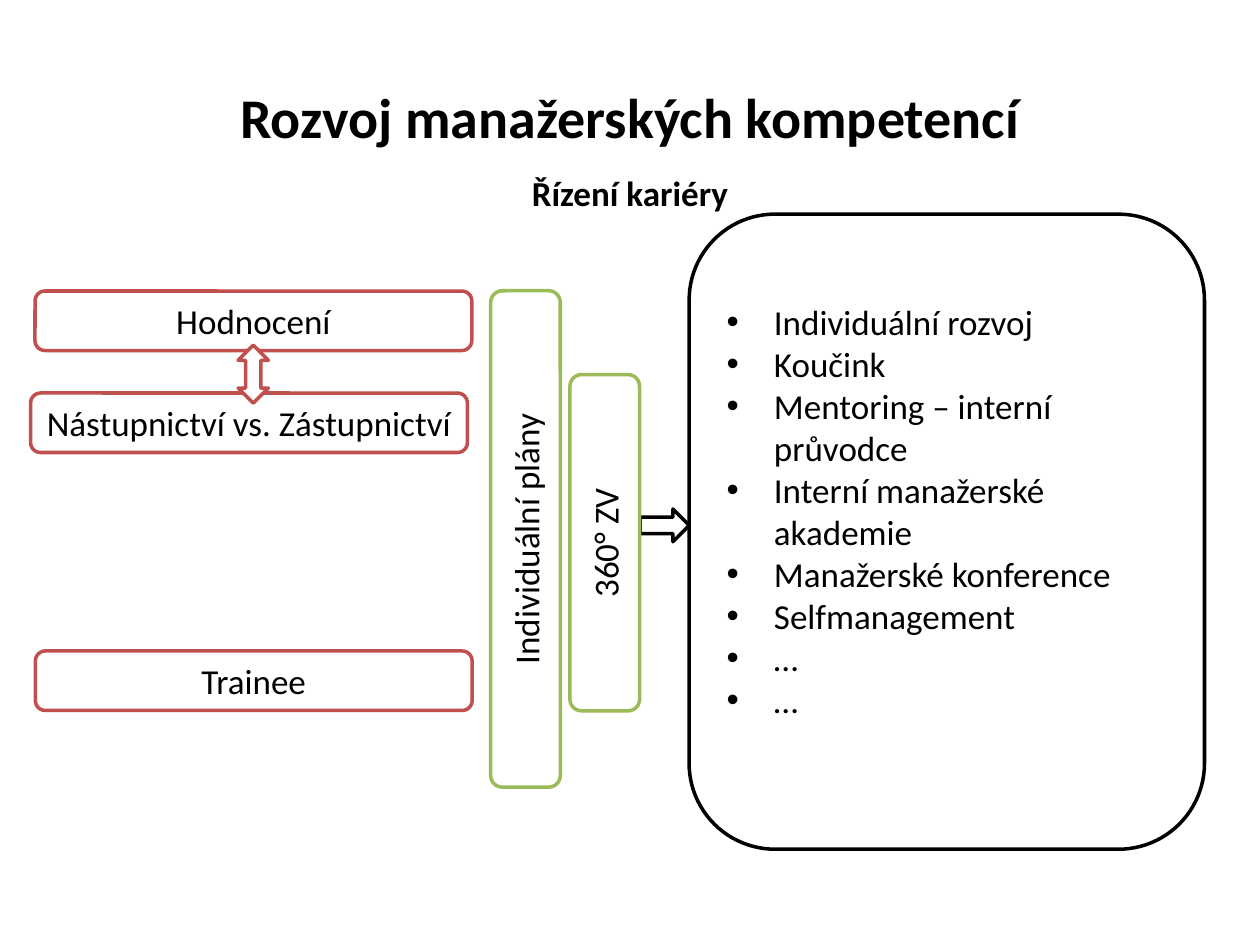
"""Build the slide on developing managerial competencies through career management."""
import pptx
import pptx.dml.color
import pptx.enum.shapes
import pptx.enum.text
import pptx.oxml
import pptx.oxml.ns
import pptx.util

Pt = pptx.util.Pt
RGBColor = pptx.dml.color.RGBColor
PRESET = pptx.enum.shapes.MSO_SHAPE
ANCHOR = pptx.enum.text.MSO_ANCHOR
ALIGN = pptx.enum.text.PP_ALIGN

BLACK = RGBColor(0x00, 0x00, 0x00)
WHITE = RGBColor(0xFF, 0xFF, 0xFF)
RED = RGBColor(0xC0, 0x50, 0x4D)
GREEN = RGBColor(0x9B, 0xBB, 0x59)
FONT = "Calibri"
BULLET_INDENT = 27

TITLE = ("Rozvoj manažerských kompetencí", 32, (36, 21.6, 648, 90))
SUBTITLE = ("Řízení kariéry", 20, (36, 94.3, 648, 33.8))
INPUTS = [
    ("Hodnocení", (20, 166.3, 249.6, 34)),
    ("Nástupnictví vs. Zástupnictví", (17.5, 224.6, 249.6, 34)),
    ("Trainee", (20.2, 372, 249.6, 34)),
]
PLANS = [
    ("Individuální plány", (280.4, 166.1, 39.8, 283.7)),
    ("360° ZV", (325.7, 214, 39.8, 192.2)),
]
INPUT_LINK = (136.1, 197.3, 17.3, 33.1)
PLAN_LINK = (365.8, 290.9, 28.1, 18.7)
PANEL = (393.8, 122.4, 294.5, 362.9)
METHODS = [
    "Individuální rozvoj",
    "Koučink",
    "Mentoring – interní průvodce",
    "Interní manažerské akademie",
    "Manažerské konference",
    "Selfmanagement",
    "…",
    "…",
]


def style(paragraph, size=20, bold=False, align=ALIGN.CENTER):
    paragraph.alignment = align
    paragraph.space_before = Pt(0)
    font = paragraph.font
    font.name, font.size, font.bold = FONT, Pt(size), bold
    font.color.rgb = BLACK


def set_bullet(paragraph, char=None, indent=0):
    properties = paragraph._p.get_or_add_pPr()
    properties.set("marL", str(Pt(indent)))
    properties.set("indent", str(-Pt(indent)))
    if char:
        font = pptx.oxml.ns.qn("a:buFont")
        properties.append(properties.makeelement(font, {"typeface": "Arial"}))
        mark = properties.makeelement(pptx.oxml.ns.qn("a:buChar"), {"char": char})
    else:
        mark = properties.makeelement(pptx.oxml.ns.qn("a:buNone"), {})
    properties.append(mark)


def fill_heading(placeholder, heading):
    text, size, area = heading
    placeholder.left, placeholder.top, placeholder.width, placeholder.height = map(Pt, area)
    placeholder.text_frame.text = text
    paragraph = placeholder.text_frame.paragraphs[0]
    set_bullet(paragraph)
    style(paragraph, size, bold=True)


def add_outlined(slide, preset, area, color, text="", rotation=0):
    left, top, width, height = area
    if rotation:
        left, top = left + (width - height) / 2, top + (height - width) / 2
        width, height = height, width
    shape = slide.shapes.add_shape(preset, Pt(left), Pt(top), Pt(width), Pt(height))
    shape.rotation = rotation
    shape.shadow.inherit = False
    shape.fill.solid()
    shape.fill.fore_color.rgb = WHITE
    shape.line.color.rgb = color
    shape.line.width = Pt(2)
    if text:
        frame = shape.text_frame
        frame.margin_left = frame.margin_right = Pt(3.6)
        frame.vertical_anchor = ANCHOR.MIDDLE
        frame.text = text
        style(frame.paragraphs[0])
    return shape


def add_methods(slide):
    frame = add_outlined(slide, PRESET.ROUNDED_RECTANGLE, PANEL, BLACK).text_frame
    frame.word_wrap = True
    frame.vertical_anchor = ANCHOR.TOP
    frame.margin_top = Pt(35)
    frame.text = "\n".join(METHODS)
    for paragraph in frame.paragraphs:
        set_bullet(paragraph, "•", BULLET_INDENT)
        style(paragraph, align=ALIGN.LEFT)


def main():
    deck = pptx.Presentation()
    deck.slide_width, deck.slide_height = Pt(720), Pt(540)
    slide = deck.slides.add_slide(deck.slide_layouts[1])
    fill_heading(slide.shapes.title, TITLE)
    fill_heading(slide.placeholders[1], SUBTITLE)
    for text, area in INPUTS:
        add_outlined(slide, PRESET.ROUNDED_RECTANGLE, area, RED, text)
    add_outlined(slide, PRESET.UP_DOWN_ARROW, INPUT_LINK, RED)
    add_methods(slide)
    add_outlined(slide, PRESET.RIGHT_ARROW, PLAN_LINK, BLACK)
    for text, area in PLANS:
        add_outlined(slide, PRESET.ROUNDED_RECTANGLE, area, GREEN, text, rotation=270)
    deck.save("out.pptx")


if __name__ == "__main__":
    main()
